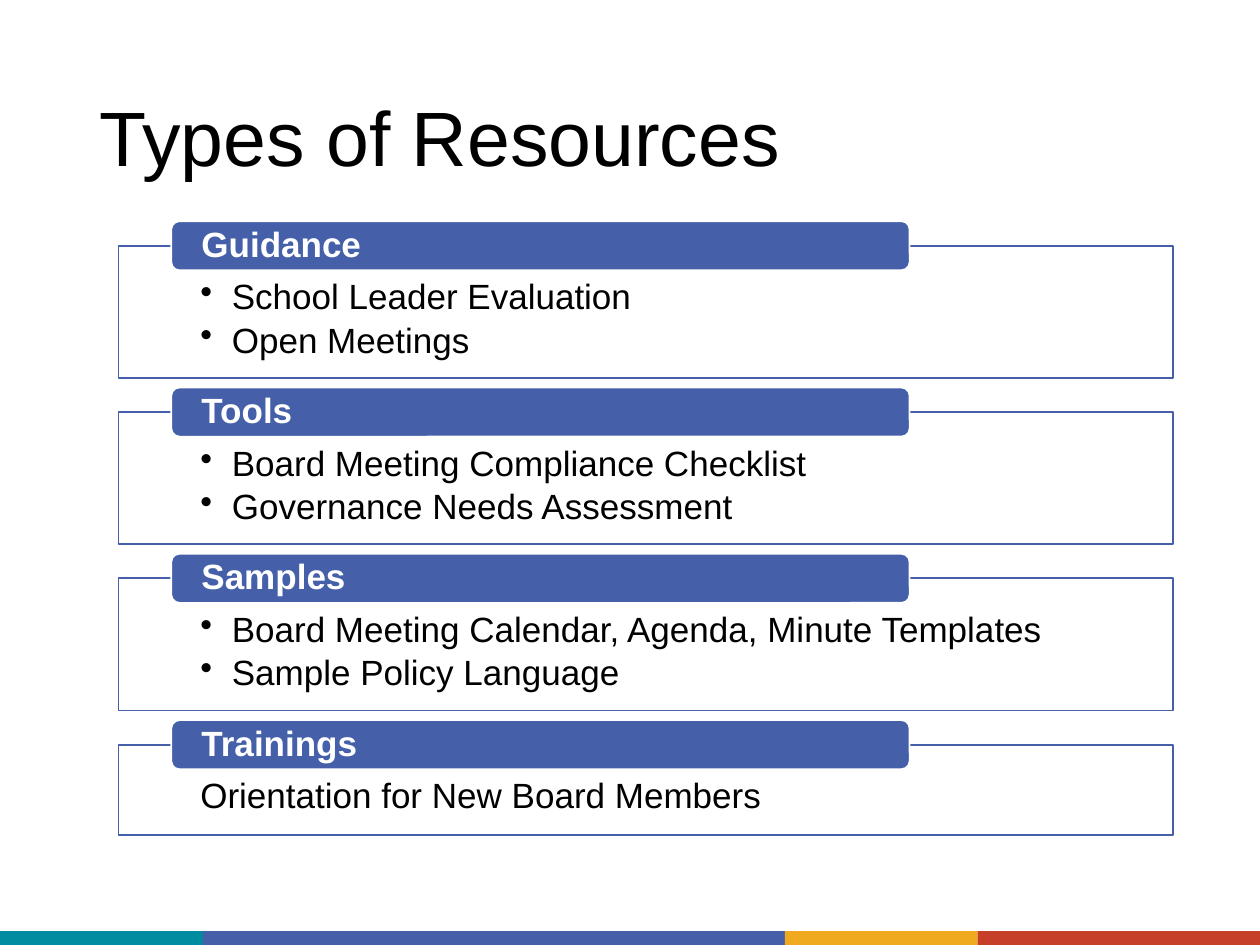
import pptx
import pptx.util
from lxml import etree
from pptx.dml.color import RGBColor
from pptx.enum.shapes import MSO_SHAPE
from pptx.enum.text import MSO_ANCHOR, MSO_AUTO_SIZE, PP_ALIGN
from pptx.oxml.ns import qn

Inches = pptx.util.Inches
Pt = pptx.util.Pt

TEAL = RGBColor(0x00, 0x8C, 0xA0)
BLUE = RGBColor(0x45, 0x5F, 0xA9)
GOLD = RGBColor(0xEF, 0xAA, 0x1F)
RED = RGBColor(0xC6, 0x3F, 0x28)
BLACK = RGBColor(0, 0, 0)
WHITE = RGBColor(0xFF, 0xFF, 0xFF)

WIDTH, HEIGHT = 10, 7.5

deck = pptx.Presentation()
deck.slide_width, deck.slide_height = Inches(WIDTH), Inches(HEIGHT)
page = deck.slides.add_slide(deck.slide_layouts.get_by_name("Title Only"))


def add_box(kind, left, top, width, height, fill, line=None):
    box = page.shapes.add_shape(
        kind, Inches(left), Inches(top), Inches(width), Inches(height))
    box.shadow.inherit = False
    box.fill.solid()
    box.fill.fore_color.rgb = fill
    if line is None:
        box.line.fill.background()
    else:
        box.line.color.rgb = line
        box.line.width = Pt(1)
    return box


def write(box, lines, size=20, color=BLACK, bold=False, anchor=MSO_ANCHOR.TOP,
          insets=(0.1, 0.05, 0.1, 0.05), after=0, hanging=0, bullet=False):
    """Fill a box with one paragraph per line; insets run left, top, right, bottom."""
    frame = box.text_frame
    frame.word_wrap = True
    frame.auto_size = MSO_AUTO_SIZE.NONE
    frame.vertical_anchor = anchor
    (frame.margin_left, frame.margin_top,
     frame.margin_right, frame.margin_bottom) = map(Inches, insets)
    for number, line in enumerate(lines):
        para = frame.paragraphs[0] if number == 0 else frame.add_paragraph()
        para.alignment = PP_ALIGN.LEFT
        para.line_spacing = 0.9
        para.space_before = Pt(0)
        para.space_after = Pt(after)
        properties = para._p.get_or_add_pPr()
        if hanging:
            properties.set("marL", str(Inches(hanging)))
            properties.set("indent", str(-Inches(hanging)))
        if bullet:
            etree.SubElement(properties, qn("a:buChar"), char="•")
        span = para.add_run()
        span.text = line
        span.font.name = "Arial"
        span.font.size = Pt(size)
        span.font.bold = bold
        span.font.color.rgb = color


# Colour strip along the bottom edge
strip_height = 0.11
left = 0
for color, width in ((TEAL, 1.61), (BLUE, 4.62), (GOLD, 1.53), (RED, 2.24)):
    add_box(MSO_SHAPE.RECTANGLE, left, HEIGHT - strip_height, width, strip_height, color)
    left += width

title = page.shapes.title
title.left, title.top = Inches(0.69), Inches(0.4)
title.width, title.height = Inches(8.62), Inches(1.45)
write(title, ["Types of Resources"], size=44, anchor=MSO_ANCHOR.MIDDLE)

# Each frame carries a tab that straddles its top edge
sections = (
    ("Guidance", ["School Leader Evaluation", "Open Meetings"]),
    ("Tools", ["Board Meeting Compliance Checklist", "Governance Needs Assessment"]),
    ("Samples", ["Board Meeting Calendar, Agenda, Minute Templates",
                 "Sample Policy Language"]),
    ("Trainings", ["Orientation for New Board Members"]),
)
frame_left, frame_top, frame_width = 0.94, 1.95, 8.37
row_pitch, base_height, line_height = 1.32, 0.39, 0.33
tab_left, tab_width, tab_height = 1.36, 5.86, 0.39

for row, (heading, items) in enumerate(sections):
    top = frame_top + row * row_pitch
    box = add_box(MSO_SHAPE.RECTANGLE, frame_left, top, frame_width,
                  base_height + line_height * len(items), WHITE, line=BLUE)
    tint = box.fill._xPr.find(qn("a:solidFill"))[0]
    etree.SubElement(tint, qn("a:alpha"), val="90000")
    write(box, items, insets=(0.65, 0.27, 0.65, 0.16), after=3,
          hanging=0.25, bullet=len(items) > 1)

    tab = add_box(MSO_SHAPE.ROUNDED_RECTANGLE, tab_left, top - tab_height / 2,
                  tab_width, tab_height, BLUE, line=WHITE)
    write(tab, [heading], color=WHITE, bold=True, anchor=MSO_ANCHOR.MIDDLE,
          insets=(0.22, 0, 0.22, 0))

deck.save("out.pptx")
